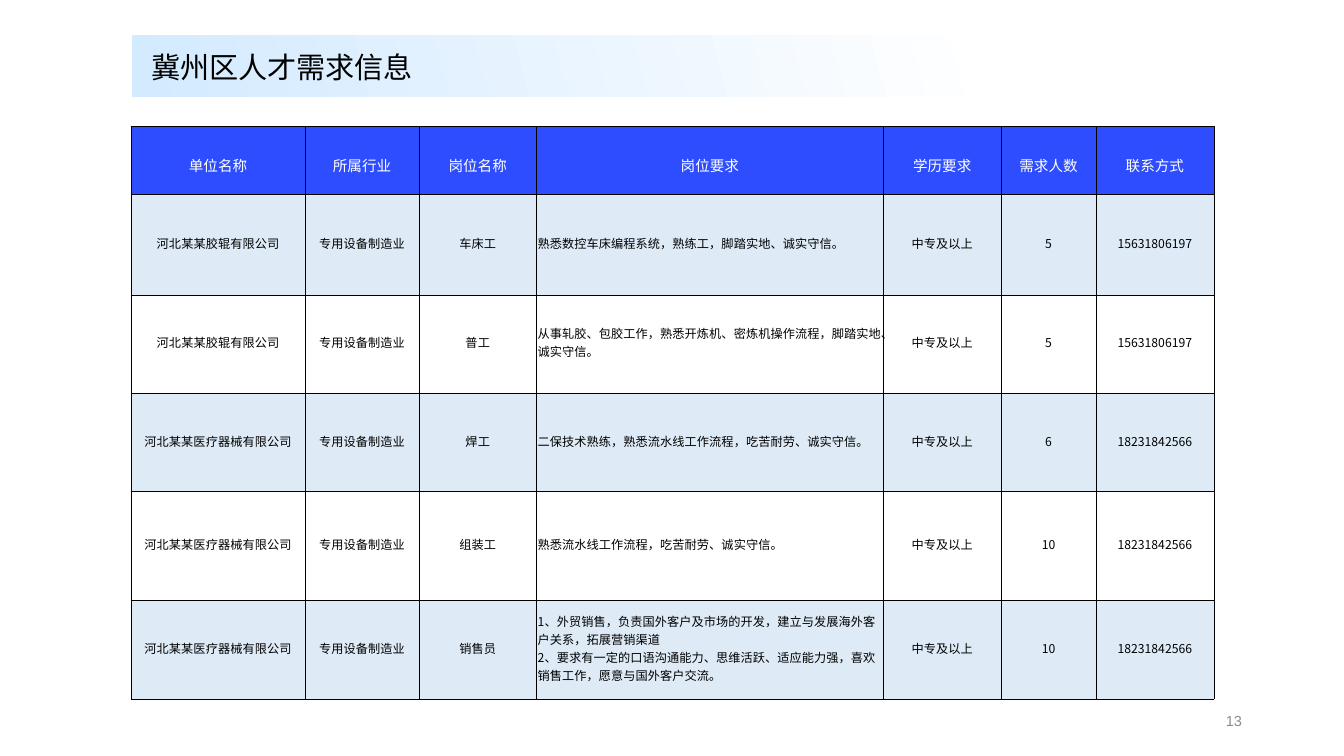
from dataclasses import dataclass

from lxml import etree
from pptx import Presentation
from pptx.dml.color import RGBColor
from pptx.enum.shapes import MSO_SHAPE
from pptx.enum.text import MSO_ANCHOR, MSO_AUTO_SIZE, PP_ALIGN
from pptx.oxml.ns import qn
from pptx.util import Cm, Pt

RECTANGLE = MSO_SHAPE.RECTANGLE
TOP, MIDDLE = MSO_ANCHOR.TOP, MSO_ANCHOR.MIDDLE
LEFT, CENTER, RIGHT = PP_ALIGN.LEFT, PP_ALIGN.CENTER, PP_ALIGN.RIGHT
FIT_SHAPE = MSO_AUTO_SIZE.SHAPE_TO_FIT_TEXT
TITLE_ONLY = 5


@dataclass(frozen=True)
class Theme:
    text_font: str = "Noto Sans CJK SC"
    number_font: str = "Arial"
    title_size: float = 20.8
    header_size: float = 10.4
    body_size: float = 8.7
    number_size: float = 10.4
    ink: str = "000000"
    paper: str = "FFFFFF"
    band: str = "D3EAFF"
    header: str = "2D4DFF"
    stripe: str = "DEEBF7"
    number: str = "8C8C8C"
    border_width: float = 0.5


THEME = Theme()

COLUMN_WIDTHS = [4.39, 2.87, 2.96, 8.74, 2.97, 2.39, 2.97]
ROW_HEIGHTS = [1.71, 2.54, 2.47, 2.49, 2.73, 2.49]
REQUIREMENT_COLUMN = 3

HEADINGS = ["单位名称", "所属行业", "岗位名称", "岗位要求", "学历要求", "需求人数", "联系方式"]
INDUSTRY = "专用设备制造业"
EDUCATION = "中专及以上"
ROLLER_MAKER = ("河北某某胶辊有限公司", "15631806197")
DEVICE_MAKER = ("河北某某医疗器械有限公司", "18231842566")
JOBS = [
    (ROLLER_MAKER, "车床工", "熟悉数控车床编程系统，熟练工，脚踏实地、诚实守信。", "5"),
    (ROLLER_MAKER, "普工", "从事轧胶、包胶工作，熟悉开炼机、密炼机操作流程，脚踏实地、诚实守信。", "5"),
    (DEVICE_MAKER, "焊工", "二保技术熟练，熟悉流水线工作流程，吃苦耐劳、诚实守信。", "6"),
    (DEVICE_MAKER, "组装工", "熟悉流水线工作流程，吃苦耐劳、诚实守信。", "10"),
    (DEVICE_MAKER, "销售员",
     "1、外贸销售，负责国外客户及市场的开发，建立与发展海外客户关系，拓展营销渠道\n"
     "2、要求有一定的口语沟通能力、思维活跃、适应能力强，喜欢销售工作，愿意与国外客户交流。", "10"),
]


def write(frame, text, size, color, align, font=THEME.text_font, spacing=None):
    frame.text = text
    for para in frame.paragraphs:
        para.alignment = align
        para.line_spacing = spacing
        for span in para.runs:
            span.font.name = font
            span.font.size = Pt(size)
            span.font.bold = False
            span.font.color.rgb = RGBColor.from_string(color)
            east_asian = etree.SubElement(span.font._element, qn("a:ea"))
            east_asian.set("typeface", font)


def add_heading(page, text, left, top, width, height):
    title = page.shapes.title
    band = page.shapes.add_shape(RECTANGLE, Cm(left), Cm(top), Cm(width), Cm(height))
    band.shadow.inherit = False
    band.line.fill.background()
    band.fill.gradient()
    band.fill.gradient_angle = 15
    for stop, color in zip(band.fill.gradient_stops, (THEME.band, THEME.paper)):
        stop.color.rgb = RGBColor.from_string(color)
    title._element.addprevious(band._element)

    title.left, title.top = Cm(left + 0.23), Cm(top + 0.23)
    title.width, title.height = Cm(7.11), Cm(1.14)
    frame = title.text_frame
    write(frame, text, THEME.title_size, THEME.ink, LEFT)
    frame.word_wrap = False
    frame.auto_size = FIT_SHAPE
    frame.vertical_anchor = TOP


def add_borders(cell):
    properties = cell._tc.get_or_add_tcPr()
    for position, side in enumerate(("a:lnL", "a:lnR", "a:lnT", "a:lnB")):
        line = etree.Element(qn(side), w=str(Pt(THEME.border_width)))
        fill = etree.SubElement(line, qn("a:solidFill"))
        etree.SubElement(fill, qn("a:srgbClr"), val=THEME.ink)
        properties.insert(position, line)


def style_cell(cell, text, row, column):
    is_header = row == 0
    cell.vertical_anchor = MIDDLE
    cell.margin_left = cell.margin_right = cell.margin_top = Cm(0.08 if is_header else 0.03)
    cell.margin_bottom = Cm(0.08 if is_header else 0.1)
    if is_header:
        write(cell.text_frame, text, THEME.header_size, THEME.paper, CENTER, spacing=1.5)
    else:
        align = LEFT if column == REQUIREMENT_COLUMN else CENTER
        write(cell.text_frame, text, THEME.body_size, THEME.ink, align)
    if is_header or row % 2:
        cell.fill.solid()
        cell.fill.fore_color.rgb = RGBColor.from_string(THEME.header if is_header else THEME.stripe)
    else:
        cell.fill.background()
    add_borders(cell)


def add_job_table(page, left, top):
    rows = [HEADINGS] + [
        [company, INDUSTRY, job, requirement, EDUCATION, count, phone]
        for (company, phone), job, requirement, count in JOBS
    ]
    table = page.shapes.add_table(
        len(rows), len(HEADINGS), Cm(left), Cm(top),
        Cm(sum(COLUMN_WIDTHS)), Cm(sum(ROW_HEIGHTS)),
    ).table
    table.horz_banding = False
    for column, width in zip(table.columns, COLUMN_WIDTHS):
        column.width = Cm(width)
    for row, height in zip(table.rows, ROW_HEIGHTS):
        row.height = Cm(height)
    for row, texts in enumerate(rows):
        for column, text in enumerate(texts):
            style_cell(table.cell(row, column), text, row, column)


def add_page_number(page, text, left, top, width, height):
    box = page.shapes.add_textbox(Cm(left), Cm(top), Cm(width), Cm(height))
    frame = box.text_frame
    frame.word_wrap = True
    frame.vertical_anchor = MIDDLE
    write(frame, text, THEME.number_size, THEME.number, RIGHT, THEME.number_font)


def main():
    deck = Presentation()
    deck.slide_width, deck.slide_height = Cm(33.87), Cm(19.05)
    page = deck.slides.add_slide(deck.slide_layouts[TITLE_ONLY])
    add_heading(page, "冀州区人才需求信息", 3.33, 0.89, 21.59, 1.55)
    add_job_table(page, 3.3, 3.18)
    add_page_number(page, "13", 23.93, 17.65, 7.62, 1.02)
    deck.save("out.pptx")


if __name__ == "__main__":
    main()
